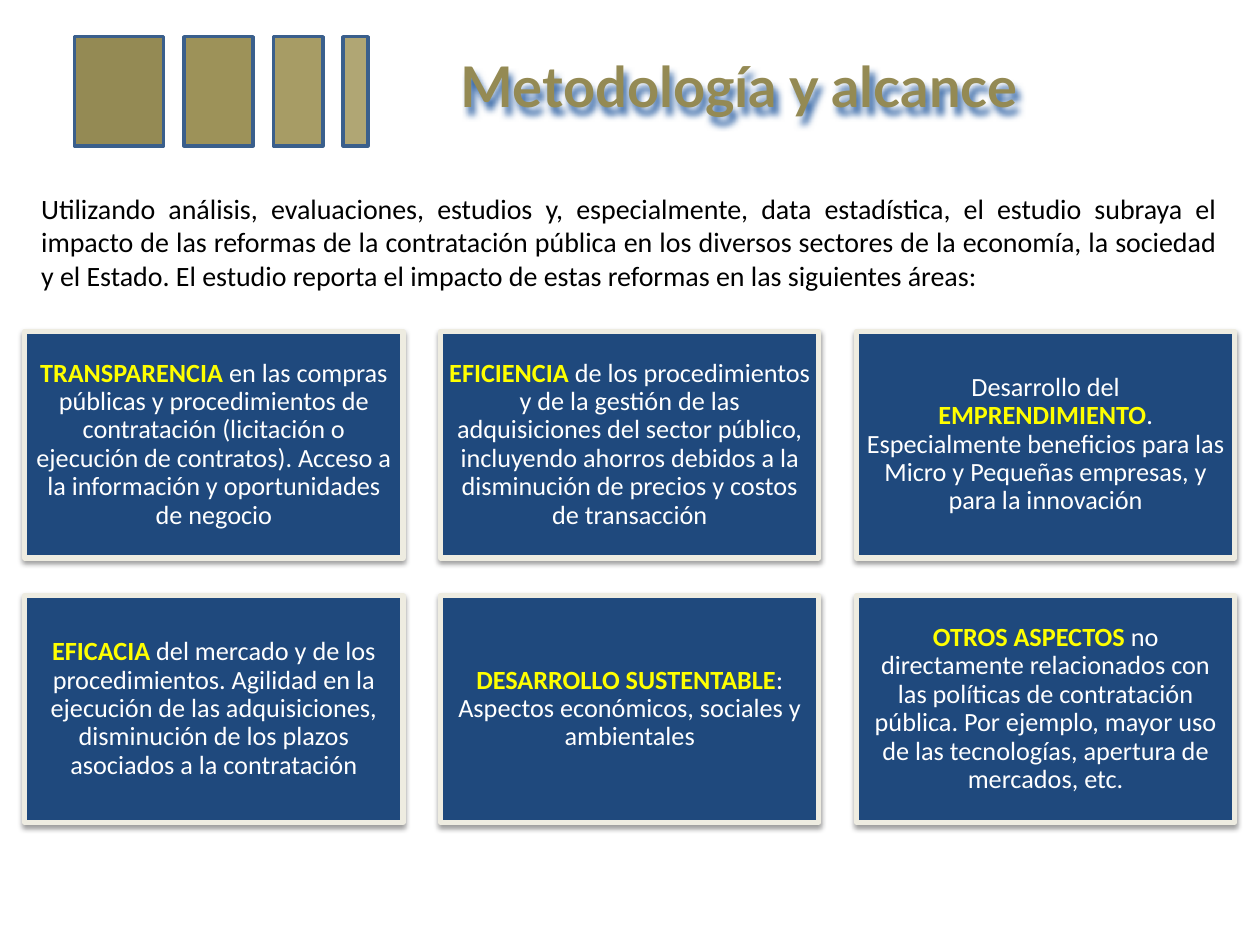
from dataclasses import dataclass

import lxml.etree
import pptx
import pptx.dml.color
import pptx.enum.shapes
import pptx.enum.text
import pptx.oxml.ns
import pptx.util
from pptx.util import Cm, Pt

ALIGN = pptx.enum.text.PP_ALIGN
ANCHOR = pptx.enum.text.MSO_ANCHOR


@dataclass(frozen=True)
class Theme:
    olive: str = "948A54"
    bar_fills: tuple = ("948A54", "9D9259", "A79C65", "B0A674")
    bar_line: str = "3A5F8C"
    card_fill: str = "1F497D"
    card_line: str = "EEECE1"
    keyword: str = "FFFF00"
    white: str = "FFFFFF"
    black: str = "000000"
    title_shadow: str = "3A6AA8"
    title_font: str = "Lato"
    body_font: str = "Calibri"
    title_size: int = 32
    body_size: int = 16
    card_size: int = 15


@dataclass(frozen=True)
class Box:
    """A region of the slide, in centimetres."""
    left: float
    top: float
    width: float
    height: float

    def lengths(self):
        return Cm(self.left), Cm(self.top), Cm(self.width), Cm(self.height)


THEME = Theme()
BAR_WIDTHS = (1.8, 1.4, 1.0, 0.5)
TITLE = "Metodología y alcance"
INTRODUCTION = (
    "Utilizando análisis, evaluaciones, estudios y, especialmente, data estadística, "
    "el estudio subraya el impacto de las reformas de la contratación pública en los "
    "diversos sectores de la economía, la sociedad y el Estado. El estudio reporta el "
    "impacto de estas reformas en las siguientes áreas:"
)
# Each card: text before the keyword, keyword, text after it.
CARDS = (
    ("", "TRANSPARENCIA", " en las compras públicas y procedimientos de contratación "
     "(licitación o ejecución de contratos). Acceso a la información y oportunidades "
     "de negocio"),
    ("", "EFICIENCIA", " de los procedimientos y de la gestión de las adquisiciones del "
     "sector público, incluyendo ahorros debidos a la disminución de precios y costos "
     "de transacción"),
    ("Desarrollo del ", "EMPRENDIMIENTO", ". Especialmente beneficios para las Micro y "
     "Pequeñas empresas, y para la innovación"),
    ("", "EFICACIA", " del mercado y de los procedimientos. Agilidad en la ejecución de "
     "las adquisiciones, disminución de los plazos asociados a la contratación"),
    ("", "DESARROLLO SUSTENTABLE", ": Aspectos económicos, sociales y ambientales"),
    ("", "OTROS ASPECTOS", " no directamente relacionados con las políticas de "
     "contratación pública. Por ejemplo, mayor uso de las tecnologías, apertura de "
     "mercados, etc."),
)


def rgb(value):
    return pptx.dml.color.RGBColor.from_string(value)


def format_run(run, font, size, color, bold=False):
    run.font.name = font
    run.font.size = Pt(size)
    run.font.color.rgb = rgb(color)
    run.font.bold = bold


def add_shadow(shape, color, opacity, blur, distance, angle):
    """Give the shape an outer shadow: opacity in percent, lengths in points."""
    namespace = pptx.oxml.ns.nsdecls("a")
    properties = shape.element.spPr
    for old in properties.findall(pptx.oxml.ns.qn("a:effectLst")):
        properties.remove(old)
    properties.append(lxml.etree.fromstring(
        f'<a:effectLst {namespace}><a:outerShdw blurRad="{Pt(blur)}" '
        f'dist="{Pt(distance)}" dir="{angle * 60000}" rotWithShape="0">'
        f'<a:srgbClr val="{color}"><a:alpha val="{opacity * 1000}"/></a:srgbClr>'
        f'</a:outerShdw></a:effectLst>'))


def add_rectangle(slide, box, fill, line, line_width):
    shape = slide.shapes.add_shape(
        pptx.enum.shapes.MSO_SHAPE.RECTANGLE, *box.lengths())
    shape.shadow.inherit = False
    shape.fill.solid()
    shape.fill.fore_color.rgb = rgb(fill)
    shape.line.color.rgb = rgb(line)
    shape.line.width = Pt(line_width)
    return shape


def add_text(slide, box, text):
    shape = slide.shapes.add_textbox(*box.lengths())
    shape.text_frame.word_wrap = True
    shape.text_frame.text = text
    return shape, shape.text_frame.paragraphs[0]


def add_bars(slide, box):
    """Fill the box with narrowing bars at equal gaps."""
    gap = (box.width - sum(BAR_WIDTHS)) / (len(BAR_WIDTHS) - 1)
    left = box.left
    for width, fill in zip(BAR_WIDTHS, THEME.bar_fills):
        add_rectangle(slide, Box(left, box.top, width, box.height),
                      fill, THEME.bar_line, 2)
        left += width + gap


def add_title(slide, box):
    shape, paragraph = add_text(slide, box, TITLE)
    shape.text_frame.vertical_anchor = ANCHOR.MIDDLE
    format_run(paragraph.runs[0], THEME.title_font, THEME.title_size,
               THEME.olive, bold=True)
    add_shadow(shape, THEME.title_shadow, 100, 4, 4, 60)


def add_introduction(slide, box):
    paragraph = add_text(slide, box, INTRODUCTION)[1]
    paragraph.alignment = ALIGN.JUSTIFY
    paragraph.space_before = Pt(0.2 * THEME.body_size)
    format_run(paragraph.runs[0], THEME.body_font, THEME.body_size, THEME.black)


def add_card(slide, box, parts):
    shape = add_rectangle(slide, box, THEME.card_fill, THEME.card_line, 3)
    add_shadow(shape, THEME.black, 38, 3.1, 1.6, 90)
    frame = shape.text_frame
    frame.word_wrap = True
    frame.vertical_anchor = ANCHOR.MIDDLE
    frame.margin_left = frame.margin_right = Cm(0.15)
    frame.margin_top = frame.margin_bottom = Cm(0.15)
    paragraph = frame.paragraphs[0]
    paragraph.alignment = ALIGN.CENTER
    paragraph.line_spacing = 0.9
    paragraph.space_after = Pt(0.35 * THEME.card_size)
    for index, text in enumerate(parts):
        if text:
            run = paragraph.add_run()
            run.text = text
            is_keyword = index == 1
            format_run(run, THEME.body_font, THEME.card_size,
                       THEME.keyword if is_keyword else THEME.white, is_keyword)


def add_card_grid(slide, box, columns=3, gap=0.76):
    rows = len(CARDS) // columns
    width = (box.width - gap * (columns - 1)) / columns
    height = (box.height - gap * (rows - 1)) / rows
    for index, parts in enumerate(CARDS):
        row, column = divmod(index, columns)
        add_card(slide, Box(box.left + column * (width + gap),
                            box.top + row * (height + gap), width, height), parts)


def main():
    presentation = pptx.Presentation()
    presentation.slide_width = Cm(25.4)
    presentation.slide_height = Cm(19.05)
    slide = presentation.slides.add_slide(presentation.slide_layouts[6])
    add_title(slide, Box(9.04, 0.13, 16.36, 3.18))
    add_introduction(slide, Box(0.58, 3.73, 24.21, 3.4))
    add_card_grid(slide, Box(0.5, 6.68, 24.39, 9.9))
    add_bars(slide, Box(1.5, 0.74, 5.92, 2.2))
    presentation.save("out.pptx")


if __name__ == "__main__":
    main()
